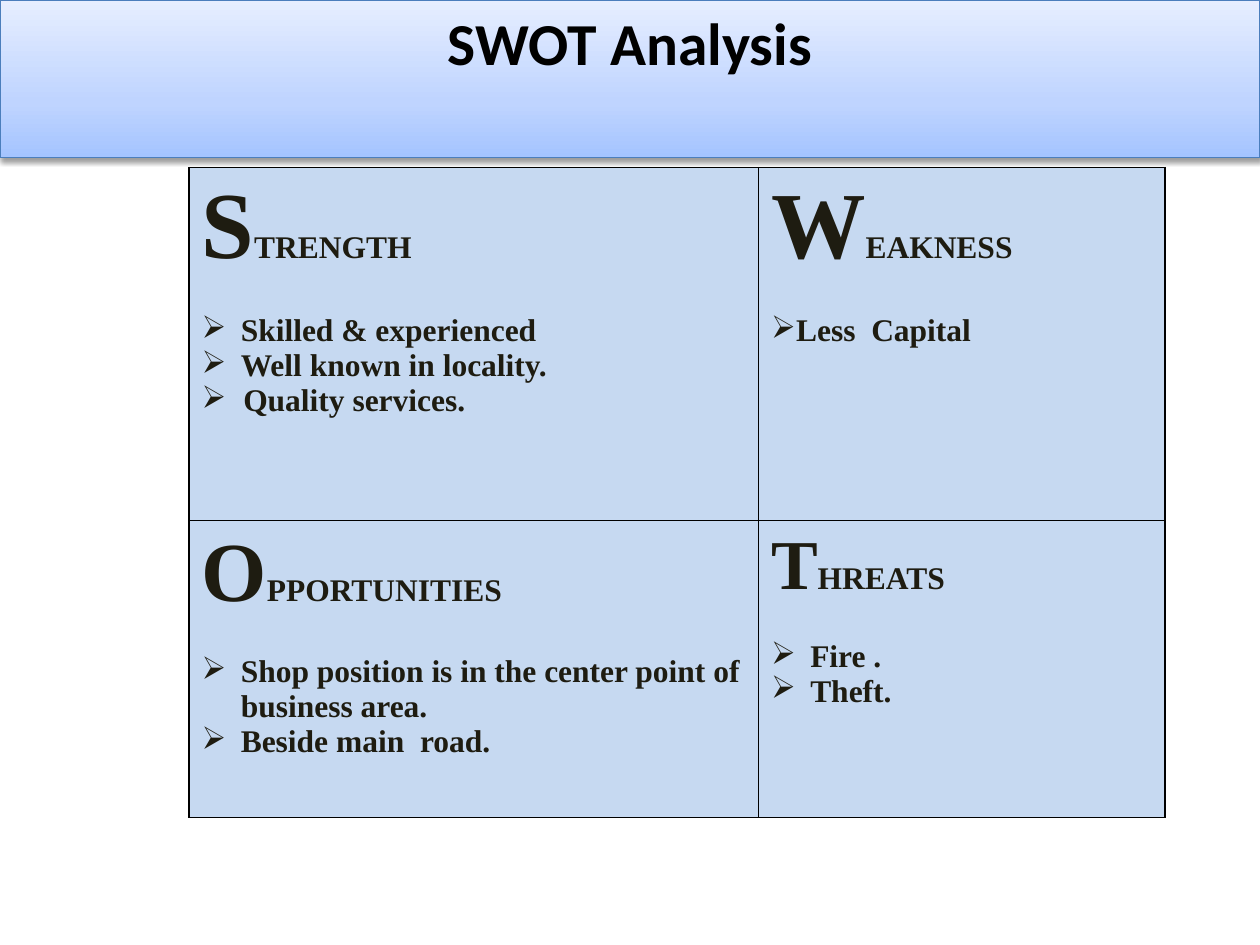
"""Build a SWOT analysis slide with a banner above a two by two table."""
from dataclasses import dataclass

from lxml.etree import SubElement
from pptx import Presentation
from pptx.dml.color import RGBColor
from pptx.enum.shapes import MSO_SHAPE as Shape
from pptx.enum.text import MSO_ANCHOR as Anchor, PP_ALIGN as Align
from pptx.oxml import parse_xml
from pptx.oxml.ns import nsdecls, qn
from pptx.util import Cm, Pt

BLACK = RGBColor(0x00, 0x00, 0x00)
INK = RGBColor(0x1E, 0x1C, 0x11)
PALE = RGBColor(0xC6, 0xD9, 0xF1)
EDGE = RGBColor(0x4B, 0x7E, 0xBC)
STOPS = (
    (0, RGBColor(0xA4, 0xC4, 0xFF)),
    (35, RGBColor(0xBF, 0xD4, 0xFF)),
    (100, RGBColor(0xE6, 0xEE, 0xFF)),
)
SERIF = "Times New Roman"
SANS = "Calibri"
BODY = 18
HANG = Cm(0.79)


@dataclass(frozen=True)
class Item:
    text: str
    indent: int = HANG


@dataclass(frozen=True)
class Panel:
    row: int
    col: int
    first: str
    rest: str
    size: int
    items: tuple[Item, ...]


PANELS = (
    Panel(0, 0, "S", "TRENGTH", 54, (
        Item("Skilled & experienced"),
        Item("Well known in locality."),
        Item("Quality services.", Cm(0.84)),
    )),
    Panel(0, 1, "W", "EAKNESS", 54, (Item("Less  Capital", Cm(0)),)),
    Panel(1, 0, "O", "PPORTUNITIES", 48, (
        Item("Shop position is in the center point of business area."),
        Item("Beside main  road."),
    )),
    Panel(1, 1, "T", "HREATS", 40, (Item("Fire ."), Item("Theft."))),
)


def add_run(para, text: str, size: int, face: str, color: RGBColor) -> None:
    run = para.add_run()
    run.text = text
    font = run.font
    font.name, font.size, font.bold = face, Pt(size), True
    font.color.rgb = color


def add_bullet(para, indent: int) -> None:
    props = para._p.get_or_add_pPr()
    props.set("marL", str(indent))
    props.set("indent", str(-indent))
    SubElement(props, qn("a:buChar"), char="➢")


def set_edges(cell) -> None:
    props = cell._tc.get_or_add_tcPr()
    for spot, side in enumerate("LRTB"):
        props.insert(spot, parse_xml(
            f'<a:ln{side} {nsdecls("a")} w="{Pt(1)}"><a:solidFill>'
            f'<a:srgbClr val="{BLACK}"/></a:solidFill></a:ln{side}>'))


def fill_panel(table, panel: Panel) -> None:
    cell = table.cell(panel.row, panel.col)
    cell.fill.solid()
    cell.fill.fore_color.rgb = PALE
    set_edges(cell)
    frame = cell.text_frame
    head = frame.paragraphs[0]
    add_run(head, panel.first, panel.size, SERIF, INK)
    add_run(head, panel.rest, BODY, SERIF, INK)
    head.space_after = Pt(20)
    for item in panel.items:
        para = frame.add_paragraph()
        add_bullet(para, item.indent)
        add_run(para, item.text, BODY, SERIF, INK)


def add_grid(slide) -> None:
    widths, heights = (Cm(11.48), Cm(8.2)), (Cm(7.11), Cm(5.99))
    table = slide.shapes.add_table(
        2, 2, Cm(3.81), Cm(3.38), sum(widths), sum(heights)).table
    table.first_row = table.horz_banding = False
    for col, width in zip(table.columns, widths):
        col.width = width
    for row, height in zip(table.rows, heights):
        row.height = height
    for panel in PANELS:
        fill_panel(table, panel)


def add_banner(slide, width: int) -> None:
    banner = slide.shapes.add_shape(Shape.RECTANGLE, 0, 0, width, Cm(3.18))
    banner.fill.gradient()
    banner.fill.gradient_angle = 90
    props = banner._element.spPr
    stops = props.find(".//" + qn("a:gsLst"))
    stops.clear()
    for place, color in STOPS:
        stop = SubElement(stops, qn("a:gs"), pos=str(place * 1000))
        SubElement(stop, qn("a:srgbClr"), val=str(color))
    banner.line.color.rgb = EDGE
    banner.line.width = Pt(0.75)
    banner.shadow.inherit = False
    shade = SubElement(
        props.find(qn("a:effectLst")), qn("a:outerShdw"), blurRad=str(Pt(3.1)),
        dist=str(Pt(1.6)), dir="5400000", rotWithShape="0")
    tone = SubElement(shade, qn("a:srgbClr"), val=str(BLACK))
    SubElement(tone, qn("a:alpha"), val="38000")
    frame = banner.text_frame
    frame.word_wrap = True
    frame.vertical_anchor = Anchor.TOP
    title = frame.paragraphs[0]
    title.alignment = Align.CENTER
    add_run(title, "SWOT Analysis", 34, SANS, BLACK)


def main() -> None:
    deck = Presentation()
    deck.slide_width, deck.slide_height = Cm(25.4), Cm(19.05)
    slide = deck.slides.add_slide(deck.slide_layouts[6])
    add_grid(slide)
    add_banner(slide, deck.slide_width)
    deck.save("out.pptx")


if __name__ == "__main__":
    main()
